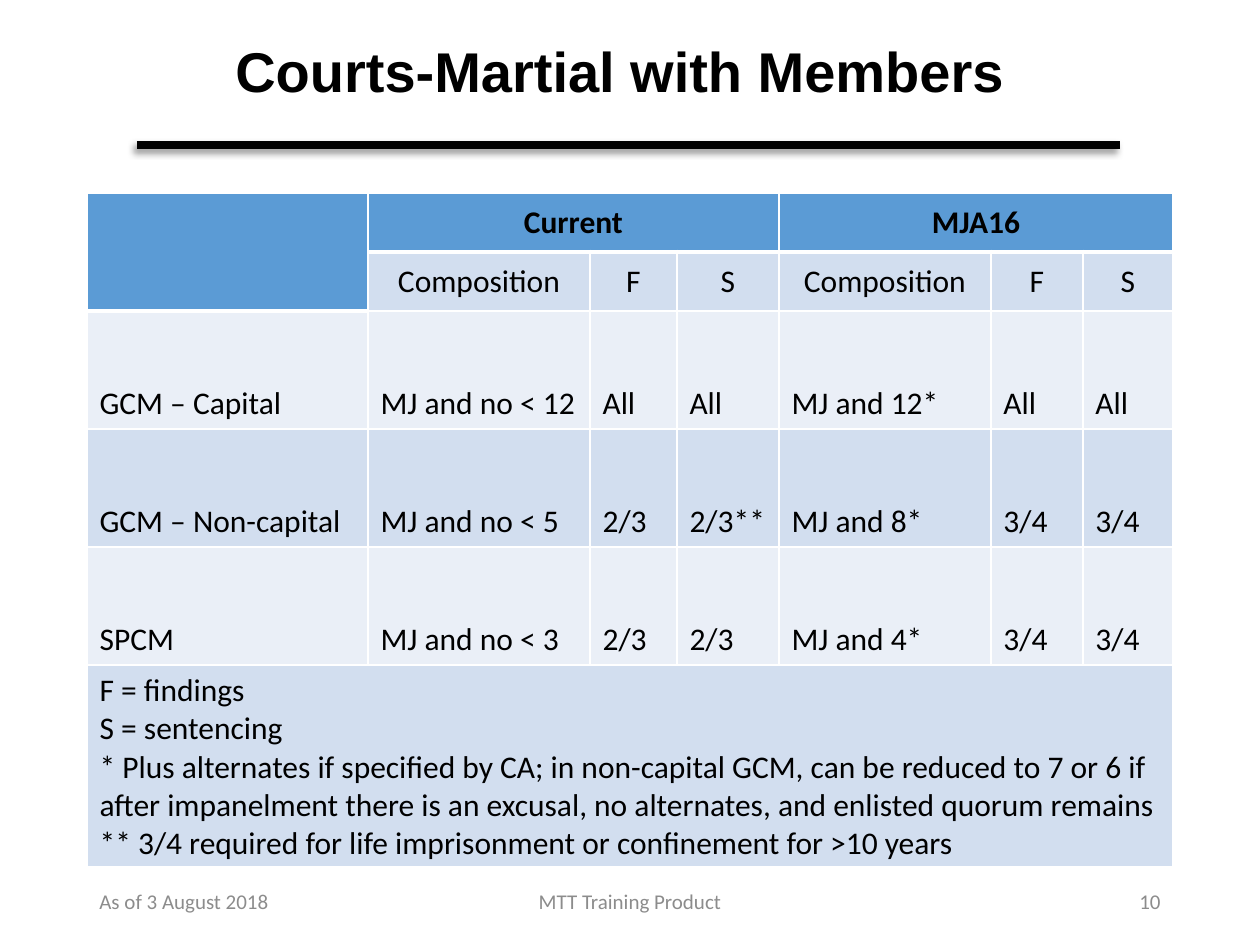
import lxml.etree
import pptx
import pptx.dml.color
import pptx.enum.shapes
import pptx.enum.text
import pptx.oxml
import pptx.oxml.ns
import pptx.util

RGBColor = pptx.dml.color.RGBColor
ALIGN = pptx.enum.text.PP_ALIGN
ANCHOR = pptx.enum.text.MSO_ANCHOR

BLACK = RGBColor(0x00, 0x00, 0x00)
GRAY = RGBColor(0x8C, 0x8C, 0x8C)
HEADER_BLUE = RGBColor(0x5B, 0x9B, 0xD5)
BAND_DARK = RGBColor(0xD2, 0xDE, 0xEF)
BAND_LIGHT = RGBColor(0xEA, 0xEF, 0xF7)

# Content
TITLE = "Courts-Martial with Members"
GROUPS = ["Current", "MJA16"]
SUBHEADS = ["Composition", "F", "S"]
COURTS = [
    ["GCM – Capital", "MJ and no < 12", "All", "All", "MJ and 12*", "All", "All"],
    ["GCM – Non-capital", "MJ and no < 5", "2/3", "2/3**", "MJ and 8*", "3/4", "3/4"],
    ["SPCM", "MJ and no < 3", "2/3", "2/3", "MJ and 4*", "3/4", "3/4"],
]
NOTES = [
    "F = findings",
    "S = sentencing",
    "* Plus alternates if specified by CA; in non-capital GCM, can be reduced to 7 or 6 "
    "if after impanelment there is an excusal, no alternates, and enlisted quorum remains",
    "** 3/4 required for life imprisonment or confinement for >10 years",
]
FOOTERS = [  # text, left, width, alignment
    ("As of 3 August 2018", 87, 284, ALIGN.LEFT),
    ("MTT Training Product", 417, 426, ALIGN.CENTER),
    ("10", 889, 284, ALIGN.RIGHT),
]
COLUMN_WIDTHS = [281, 222, 87, 102, 212, 92, 90]
ROW_HEIGHTS = [59, 59, 118, 118, 118, 200]


def px(count):
    return pptx.util.Emu(round(count * 914400 / 126))


def format_text(text_frame, font_name, size, color, alignment, bold=False):
    for paragraph in text_frame.paragraphs:
        paragraph.alignment = alignment
        for run in paragraph.runs:
            run.font.name = font_name
            run.font.size = pptx.util.Pt(size)
            run.font.bold = bold
            run.font.color.rgb = color


def add_text(slide, text, left, top, width, height, *style):
    text_frame = slide.shapes.add_textbox(px(left), px(top), px(width), px(height)).text_frame
    text_frame.word_wrap = True
    text_frame.vertical_anchor = ANCHOR.MIDDLE
    text_frame.text = text
    format_text(text_frame, *style)
    return text_frame


def add_rule(slide):
    rule = slide.shapes.add_connector(
        pptx.enum.shapes.MSO_CONNECTOR.STRAIGHT, px(137), px(145), px(1120), px(145))
    rule.line.color.rgb = BLACK
    rule.line.width = pptx.util.Pt(4.25)
    rule._element.spPr.append(pptx.oxml.parse_xml(
        f'<a:effectLst {pptx.oxml.ns.nsdecls("a")}>'
        '<a:outerShdw blurRad="50800" dist="38100" dir="8100000" rotWithShape="0">'
        '<a:srgbClr val="000000"><a:alpha val="40000"/></a:srgbClr>'
        '</a:outerShdw></a:effectLst>'))


def set_borders(cell, top, bottom):
    properties = cell._tc.get_or_add_tcPr()
    for index, (side, points) in enumerate(zip("LRTB", (1, 1, top, bottom))):
        properties.insert(index, pptx.oxml.parse_xml(
            f'<a:ln{side} {pptx.oxml.ns.nsdecls("a")} w="{points * 12700}">'
            f'<a:solidFill><a:srgbClr val="FFFFFF"/></a:solidFill></a:ln{side}>'))


def edge_below(row, column):
    """Border width in points under a cell: heavy below the header cells."""
    return 3 if row == (1 if column == 0 else 0) else 1


def add_court_table(slide):
    last_row, last_column = len(ROW_HEIGHTS) - 1, len(COLUMN_WIDTHS) - 1
    table = slide.shapes.add_table(
        len(ROW_HEIGHTS), len(COLUMN_WIDTHS), px(87), px(193),
        px(sum(COLUMN_WIDTHS)), px(sum(ROW_HEIGHTS))).table
    table.first_row = table.horz_banding = False
    for column, width in zip(table.columns, COLUMN_WIDTHS):
        column.width = px(width)
    for row, height in zip(table.rows, ROW_HEIGHTS):
        row.height = px(height)

    rows = [[""], [""] + SUBHEADS * len(GROUPS), *COURTS, ["\n".join(NOTES)]]
    for group in GROUPS:
        rows[0] += [group, "", ""]
    rows[-1] += [""] * last_column

    for r, texts in enumerate(rows):
        for c, text in enumerate(texts):
            cell = table.cell(r, c)
            is_header = r == 0 or (r == 1 and c == 0)
            cell.fill.solid()
            cell.fill.fore_color.rgb = (
                HEADER_BLUE if is_header else BAND_DARK if r % 2 else BAND_LIGHT)
            if r == last_row:
                cell.fill.fore_color.rgb = BAND_DARK
            cell.vertical_anchor = ANCHOR.MIDDLE if r < 2 else ANCHOR.BOTTOM
            set_borders(cell, edge_below(r - 1, c), edge_below(r, c))
            if text:
                cell.text_frame.text = text
                format_text(cell.text_frame, "Calibri", 18, BLACK,
                            ALIGN.CENTER if r < 2 else ALIGN.LEFT, is_header)

    # Merged areas: corner, group headings, notes
    table.cell(0, 0).merge(table.cell(1, 0))
    for first in range(1, last_column, len(SUBHEADS)):
        table.cell(0, first).merge(table.cell(0, first + len(SUBHEADS) - 1))
    table.cell(last_row, 0).merge(table.cell(last_row, last_column))


def main():
    presentation = pptx.Presentation()
    presentation.slide_width, presentation.slide_height = px(1260), px(945)
    slide = presentation.slides.add_slide(presentation.slide_layouts[6])

    add_rule(slide)
    title = add_text(slide, TITLE, 87, 23, 1066, 102, "Arial", 32, BLACK, ALIGN.CENTER, True)
    title.paragraphs[0].line_spacing = 0.9
    for text, left, width, alignment in FOOTERS:
        add_text(slide, text, left, 876, width, 50, "Calibri", 12, GRAY, alignment)
    add_court_table(slide)

    presentation.save("out.pptx")


if __name__ == "__main__":
    main()
